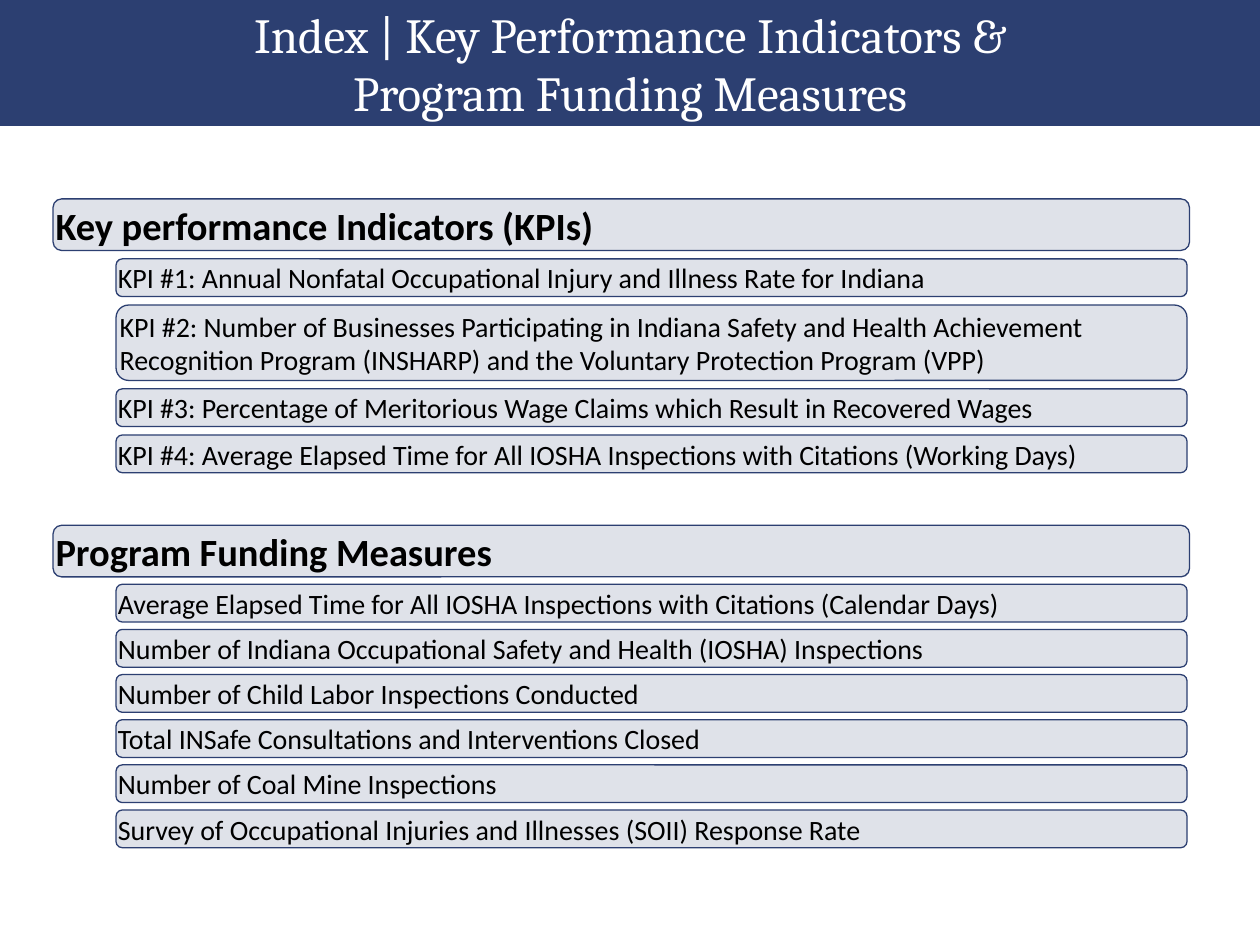
"""Build the index slide of key performance indicators and funding measures."""
from dataclasses import dataclass

from lxml import etree
from pptx import Presentation
from pptx import util as u
from pptx.dml.color import RGBColor
from pptx.enum import shapes, text
from pptx.oxml import ns

NAVY = RGBColor(0x2C, 0x3F, 0x71)
WHITE = RGBColor(0xFF, 0xFF, 0xFF)
BLACK = RGBColor(0x00, 0x00, 0x00)

HEADING_LEFT, HEADING_WIDTH, HEADING_HEIGHT = u.Cm(1.07), u.Cm(22.91), u.Cm(1.04)
ITEM_LEFT, ITEM_WIDTH, LINE_HEIGHT = u.Cm(2.34), u.Cm(21.59), u.Cm(0.76)


@dataclass(frozen=True)
class Item:
    label: str
    lines: int = 1


@dataclass(frozen=True)
class Section:
    heading: str
    top: u.Length
    gap: u.Length
    items: tuple[Item, ...]


SECTIONS = (
    Section("Key performance Indicators (KPIs)", u.Cm(4.01), u.Cm(0.17), (
        Item("KPI #1: Annual Nonfatal Occupational Injury and Illness Rate for Indiana"),
        Item("KPI #2: Number of Businesses Participating in Indiana Safety and Health "
             "Achievement Recognition Program (INSHARP) and the Voluntary Protection "
             "Program (VPP)", lines=2),
        Item("KPI #3: Percentage of Meritorious Wage Claims which Result in Recovered Wages"),
        Item("KPI #4: Average Elapsed Time for All IOSHA Inspections with Citations "
             "(Working Days)"),
    )),
    Section("Program Funding Measures", u.Cm(10.59), u.Cm(0.15), (
        Item("Average Elapsed Time for All IOSHA Inspections with Citations (Calendar Days)"),
        Item("Number of Indiana Occupational Safety and Health (IOSHA) Inspections"),
        Item("Number of Child Labor Inspections Conducted"),
        Item("Total INSafe Consultations and Interventions Closed"),
        Item("Number of Coal Mine Inspections"),
        Item("Survey of Occupational Injuries and Illnesses (SOII) Response Rate"),
    )),
)


def write_text(shape, content: str, *, size: int, font: str = "Calibri",
               color: RGBColor = BLACK, bold: bool = False,
               align=text.PP_ALIGN.LEFT) -> None:
    """Fill a shape with one formatted, vertically centred paragraph."""
    frame = shape.text_frame
    frame.word_wrap = True
    frame.vertical_anchor = text.MSO_ANCHOR.MIDDLE
    paragraph = frame.paragraphs[0]
    paragraph.text = content
    paragraph.alignment = align
    for run in paragraph.runs:
        run.font.name = font
        run.font.size = u.Pt(size)
        run.font.bold = bold
        run.font.color.rgb = color


def add_filled(slide, kind, left: int, top: int, width: int, height: int):
    """Add a navy shape without shadow."""
    shape = slide.shapes.add_shape(kind, left, top, width, height)
    shape.shadow.inherit = False
    shape.fill.solid()
    shape.fill.fore_color.rgb = NAVY
    return shape


def add_title(slide, content: str, width: int) -> None:
    """Add the title band across the top."""
    band = add_filled(slide, shapes.MSO_SHAPE.RECTANGLE, 0, 0, width, u.Cm(2.54))
    band.line.fill.background()
    write_text(band, content, size=28, font="Cambria", color=WHITE,
               align=text.PP_ALIGN.CENTER)


def add_bar(slide, content: str, left: int, top: int, width: int, height: int,
            *, size: int, bold: bool = False) -> None:
    """Add a tinted rounded bar with its label."""
    bar = add_filled(slide, shapes.MSO_SHAPE.FLOWCHART_ALTERNATE_PROCESS,
                     left, top, width, height)
    color = bar.fill._xPr.find(ns.qn("a:solidFill")).find(ns.qn("a:srgbClr"))
    etree.SubElement(color, ns.qn("a:alpha"), val="15000")
    bar.line.color.rgb = NAVY
    bar.line.width = u.Pt(0.75)
    frame = bar.text_frame
    frame.margin_left = frame.margin_right = frame.margin_top = frame.margin_bottom = 0
    frame.auto_size = text.MSO_AUTO_SIZE.SHAPE_TO_FIT_TEXT
    write_text(bar, content, size=size, bold=bold)


def add_section(slide, section: Section) -> None:
    """Add a heading bar and stack its items below."""
    add_bar(slide, section.heading, HEADING_LEFT, section.top, HEADING_WIDTH,
            HEADING_HEIGHT, size=22, bold=True)
    top = section.top + HEADING_HEIGHT + section.gap
    for item in section.items:
        height = LINE_HEIGHT * item.lines
        add_bar(slide, item.label, ITEM_LEFT, top, ITEM_WIDTH, height, size=16)
        top += height + section.gap


def main() -> None:
    """Create and save the presentation."""
    presentation = Presentation()
    presentation.slide_width = u.Cm(25.4)
    presentation.slide_height = u.Cm(19.05)
    slide = presentation.slides.add_slide(presentation.slide_layouts[6])
    add_title(slide, "Index | Key Performance Indicators &\nProgram Funding Measures",
              presentation.slide_width)
    for section in SECTIONS:
        add_section(slide, section)
    presentation.save("out.pptx")


if __name__ == "__main__":
    main()
